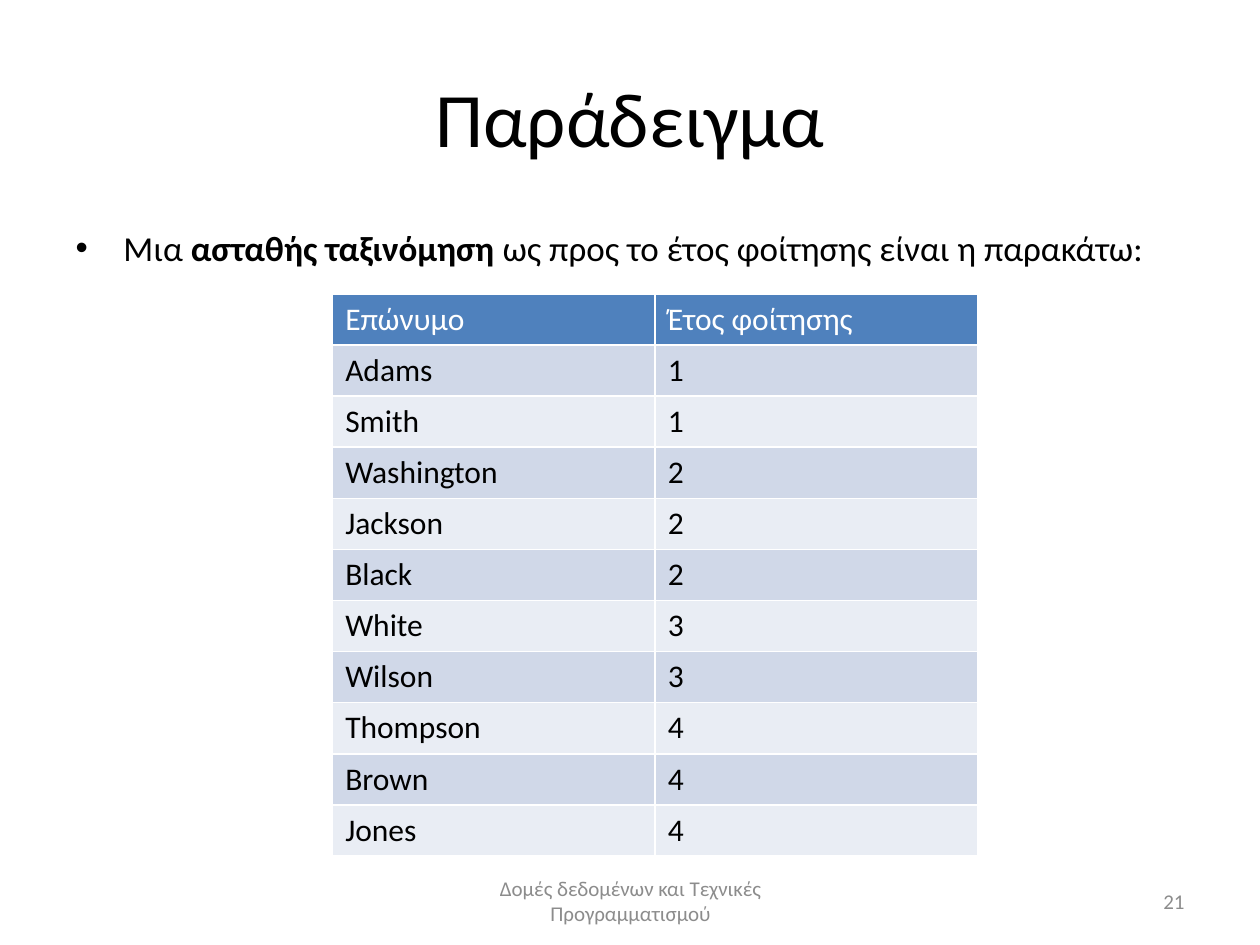
from dataclasses import dataclass
from pptx import Presentation
from pptx.dml.color import RGBColor
from pptx.enum.text import MSO_ANCHOR, MSO_AUTO_SIZE, PP_ALIGN
from pptx.util import Emu, Inches, Pt


@dataclass(frozen=True)
class Theme:
    font: str = "Calibri"
    ink: str = "000000"
    muted: str = "8C8C8C"
    paper: str = "FFFFFF"
    header: str = "4F81BD"
    bands: tuple = ("D0D8E8", "E9EDF4")
    title_size: int = 44
    body_size: int = 20
    table_size: int = 18
    footer_size: int = 12


THEME = Theme()
WIDTH, HEIGHT = Inches(10), Inches(7.5)

STUDENTS = [
    ("Adams", 1), ("Smith", 1), ("Washington", 2), ("Jackson", 2), ("Black", 2),
    ("White", 3), ("Wilson", 3), ("Thompson", 4), ("Brown", 4), ("Jones", 4),
]


def share(left, top, width, height):
    return (Emu(int(WIDTH * left)), Emu(int(HEIGHT * top)),
            Emu(int(WIDTH * width)), Emu(int(HEIGHT * height)))


def place(shape, box):
    for side, length in zip(("left", "top", "width", "height"), box):
        setattr(shape, side, length)


def write(paragraph, wording, size, color, bold=False):
    run = paragraph.add_run()
    run.text = wording
    for name, value in {"name": THEME.font, "size": Pt(size), "bold": bold}.items():
        setattr(run.font, name, value)
    run.font.color.rgb = RGBColor.from_string(color)


def set_frame(frame, anchor):
    settings = {"word_wrap": True, "auto_size": MSO_AUTO_SIZE.NONE, "vertical_anchor": anchor}
    for name, value in settings.items():
        setattr(frame, name, value)


def add_heading(slide, box):
    heading = slide.shapes.title
    place(heading, box)
    set_frame(heading.text_frame, MSO_ANCHOR.MIDDLE)
    line = heading.text_frame.paragraphs[0]
    line.alignment = PP_ALIGN.CENTER
    write(line, "Παράδειγμα", THEME.title_size, THEME.ink)


def add_statement(slide, box):
    statement = slide.placeholders[1]
    place(statement, box)
    set_frame(statement.text_frame, MSO_ANCHOR.TOP)
    line = statement.text_frame.paragraphs[0]
    indent = Inches(0.38)
    properties = line._p.get_or_add_pPr()
    for name, value in {"marL": indent, "indent": -indent}.items():
        properties.set(name, str(int(value)))
    for wording, bold in (
        ("Μια ", False),
        ("ασταθής ταξινόμηση ", True),
        ("ως προς το έτος φοίτησης είναι η παρακάτω:", False),
    ):
        write(line, wording, THEME.body_size, THEME.ink, bold)


def add_students(slide, box):
    rows = [("Επώνυμο", "Έτος φοίτησης"), *STUDENTS]
    students = slide.shapes.add_table(len(rows), len(rows[0]), *box).table
    for number, row in enumerate(rows):
        fill = THEME.bands[(number - 1) % 2] if number else THEME.header
        color = THEME.ink if number else THEME.paper
        for column, wording in enumerate(row):
            cell = students.cell(number, column)
            cell.fill.solid()
            cell.fill.fore_color.rgb = RGBColor.from_string(fill)
            write(cell.text_frame.paragraphs[0], str(wording), THEME.table_size, color)


def add_footer(slide, box, wording, alignment):
    footer = slide.shapes.add_textbox(*box)
    set_frame(footer.text_frame, MSO_ANCHOR.MIDDLE)
    line = footer.text_frame.paragraphs[0]
    line.alignment = alignment
    write(line, wording, THEME.footer_size, THEME.muted)


def main():
    deck = Presentation()
    deck.slide_width, deck.slide_height = WIDTH, HEIGHT
    slide = deck.slides.add_slide(deck.slide_layouts[1])
    add_heading(slide, share(0.05, 0.04, 0.9, 1 / 6))
    add_statement(slide, share(0.05, 7 / 30, 0.9, 0.66))
    add_footer(slide, share(0.342, 0.927, 0.317, 0.053),
               "Δομές δεδομένων και Τεχνικές Προγραμματισμού", PP_ALIGN.CENTER)
    add_footer(slide, share(0.717, 0.927, 0.233, 0.053), "21", PP_ALIGN.RIGHT)
    add_students(slide, share(0.264, 0.311, 0.512, 0.595))
    deck.save("out.pptx")


if __name__ == "__main__":
    main()
